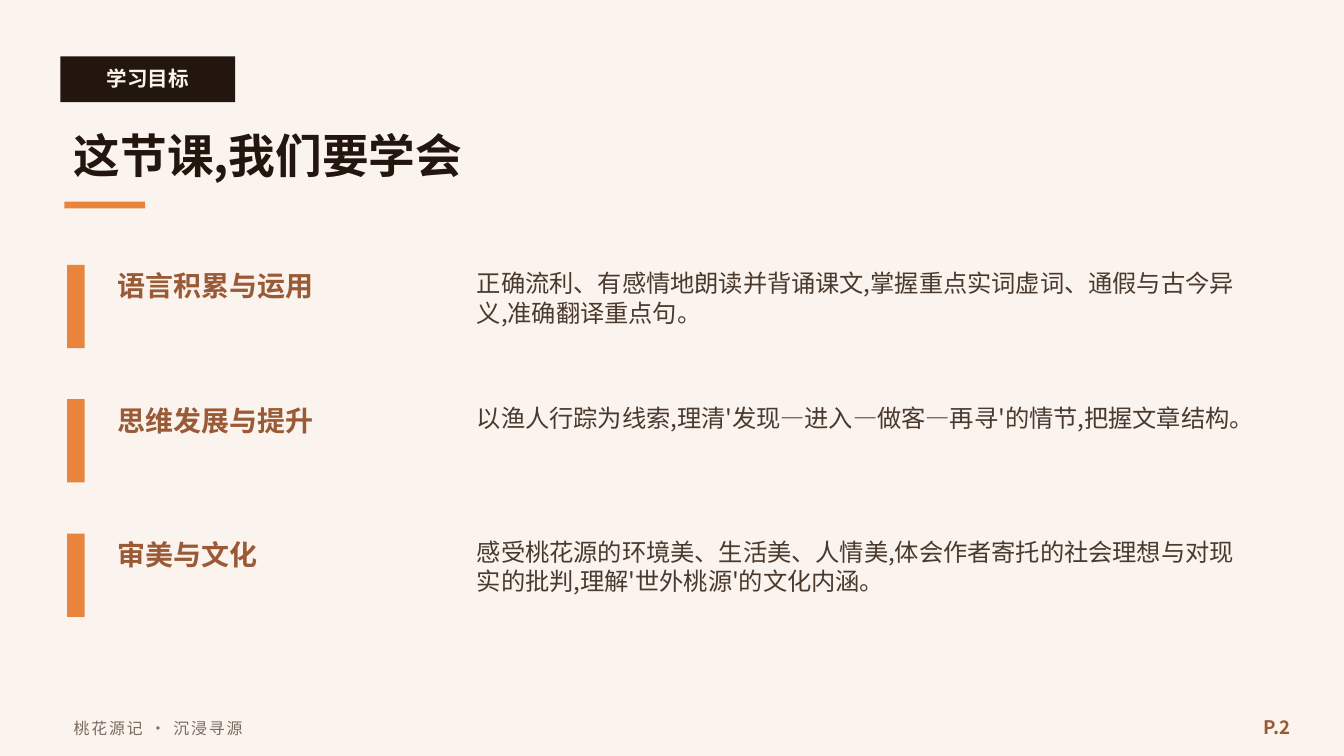
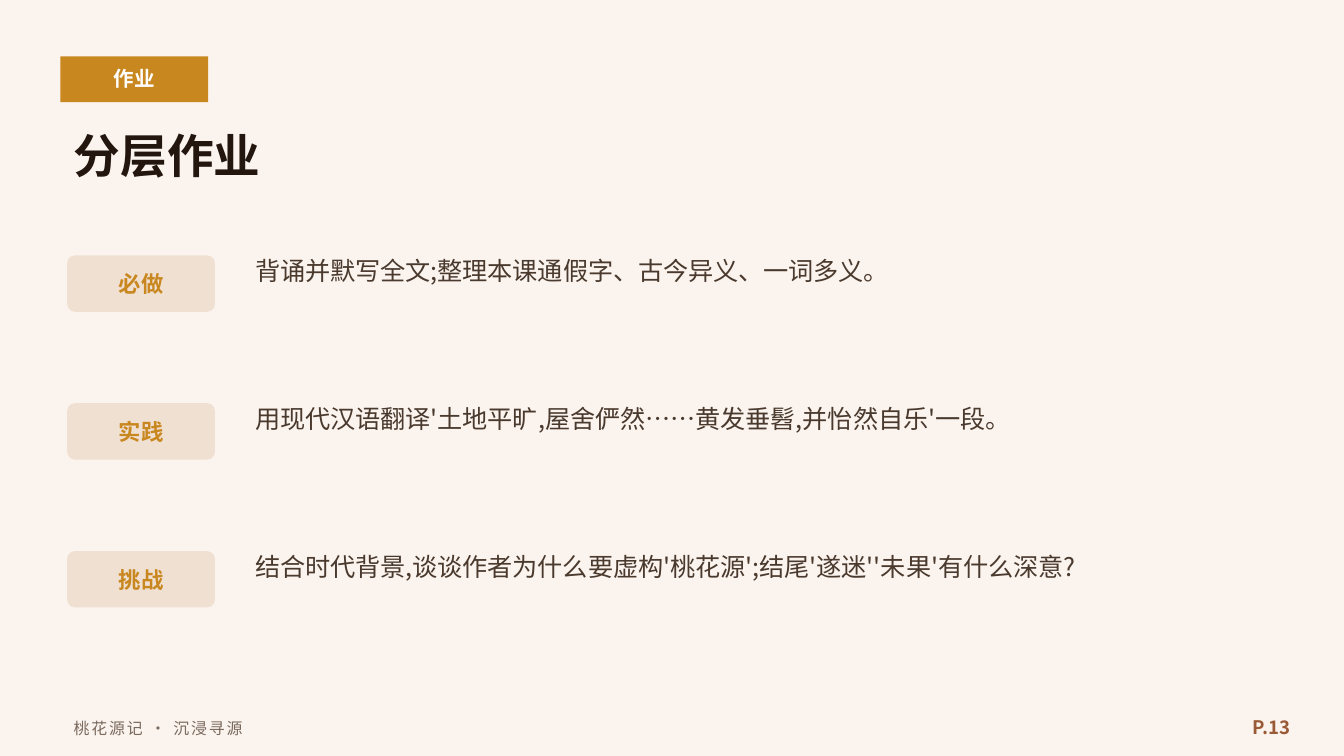
from pptx import Presentation
from pptx.dml.color import RGBColor
from pptx.enum.shapes import MSO_SHAPE
from pptx.enum.text import MSO_ANCHOR, MSO_AUTO_SIZE, PP_ALIGN
from pptx.oxml.ns import qn
from pptx.util import Inches, Pt

FONT = "Noto Sans CJK SC"
CREAM = RGBColor(0xFB, 0xF3, 0xEE)
WHITE = RGBColor(0xFF, 0xFF, 0xFF)
INK = RGBColor(0x23, 0x16, 0x0E)
BODY = RGBColor(0x4A, 0x3A, 0x2E)
MUTED = RGBColor(0x7A, 0x6A, 0x5E)
BROWN = RGBColor(0x9A, 0x5A, 0x36)
ORANGE = RGBColor(0xE8, 0x84, 0x3C)
GOLD = RGBColor(0xC9, 0x87, 0x1F)
SAND = RGBColor(0xF0, 0xE0, 0xD2)

GOALS = [
    ("语言积累与运用", "正确流利、有感情地朗读并背诵课文,掌握重点实词虚词、通假与古今异义,准确翻译重点句。"),
    ("思维发展与提升", "以渔人行踪为线索,理清'发现—进入—做客—再寻'的情节,把握文章结构。"),
    ("审美与文化", "感受桃花源的环境美、生活美、人情美,体会作者寄托的社会理想与对现实的批判,理解'世外桃源'的文化内涵。"),
]
TASKS = [
    ("必做", "背诵并默写全文;整理本课通假字、古今异义、一词多义。"),
    ("实践", "用现代汉语翻译'土地平旷,屋舍俨然……黄发垂髫,并怡然自乐'一段。"),
    ("挑战", "结合时代背景,谈谈作者为什么要虚构'桃花源';结尾'遂迷''未果'有什么深意?"),
]


# Shared building blocks
def write(frame, text, size, color, bold=False, align=PP_ALIGN.LEFT,
          anchor=MSO_ANCHOR.TOP, spacing=None):
    frame.word_wrap = True
    frame.auto_size = MSO_AUTO_SIZE.NONE
    frame.vertical_anchor = anchor
    paragraph = frame.paragraphs[0]
    paragraph.text = text
    paragraph.alignment = align
    font = paragraph.font
    font.name, font.size, font.bold = FONT, Pt(size), bold
    font.color.rgb = color
    # East Asian typeface and letter spacing
    defaults = paragraph._p.pPr.find(qn("a:defRPr"))
    east_asian = defaults.makeelement(qn("a:ea"), {"typeface": FONT})
    defaults.find(qn("a:latin")).addnext(east_asian)
    if spacing:
        defaults.set("spc", str(spacing * 100))


def add_text(slide, box, text, size, color, **style):
    label = slide.shapes.add_textbox(*map(Inches, box))
    write(label.text_frame, text, size, color, **style)


def add_block(slide, box, fill, preset=MSO_SHAPE.RECTANGLE):
    block = slide.shapes.add_shape(preset, *map(Inches, box))
    block.shadow.inherit = False
    block.fill.solid()
    block.fill.fore_color.rgb = fill
    block.line.fill.background()
    return block


# Section tag and title
def add_header(slide, tag, tag_width, tag_fill, tag_color, title):
    left, top = 0.45, 0.4
    add_block(slide, (left, top + 0.02, tag_width, 0.34), tag_fill)
    add_text(slide, (left, top, tag_width, 0.36), tag, 11, tag_color, bold=True,
             align=PP_ALIGN.CENTER, anchor=MSO_ANCHOR.MIDDLE)
    heading = slide.shapes.title
    heading.left, heading.top = Inches(left), Inches(top + 0.45)
    heading.width, heading.height = Inches(9), Inches(0.6)
    write(heading.text_frame, title, 25, INK, bold=True, anchor=MSO_ANCHOR.MIDDLE)


# Course name and page number
def add_footer(slide, page):
    add_text(slide, (0.45, 5.28, 7, 0.28), "桃花源记 · 沉浸寻源", 8.5, MUTED,
             anchor=MSO_ANCHOR.MIDDLE, spacing=1)
    add_text(slide, (9, 5.26, 0.7, 0.3), f"P.{page}", 10, BROWN, bold=True,
             align=PP_ALIGN.RIGHT, anchor=MSO_ANCHOR.MIDDLE)


# One goal: accent bar, name, explanation
def add_goal(slide, left, top, name, detail):
    add_block(slide, (left, top + 0.02, 0.13, 0.62), ORANGE)
    add_text(slide, (left + 0.28, top, 2.6, 0.6), name, 15, BROWN, bold=True)
    add_text(slide, (left + 2.95, top, 6, 0.9), detail, 13, BODY)


# One task: level pill, assignment
def add_task(slide, left, top, level, assignment):
    pill = add_block(slide, (left, top + 0.05, 1.1, 0.42), SAND, MSO_SHAPE.ROUNDED_RECTANGLE)
    pill.adjustments[0] = 0.14
    add_text(slide, (left, top + 0.04, 1.1, 0.44), level, 12, GOLD, bold=True,
             align=PP_ALIGN.CENTER, anchor=MSO_ANCHOR.MIDDLE)
    add_text(slide, (left + 1.3, top, 7.7, 0.9), assignment, 13.5, BODY)


def build_goals(slide):
    add_header(slide, "学习目标", 1.3, INK, CREAM, "这节课,我们要学会")
    add_block(slide, (0.48, 1.5, 0.6, 0.05), ORANGE)
    for row, (name, detail) in enumerate(GOALS):
        add_goal(slide, 0.5, 1.95 + row, name, detail)
    add_footer(slide, 2)


def build_homework(slide):
    add_header(slide, "作业", 1.1, GOLD, WHITE, "分层作业")
    for row, (level, assignment) in enumerate(TASKS):
        add_task(slide, 0.5, 1.85 + row * 1.1, level, assignment)
    add_footer(slide, 13)


def main():
    deck = Presentation()
    # Widescreen, 16:9
    deck.slide_width = Inches(10)
    deck.slide_height = Inches(10 * 9 / 16)
    background = deck.slide_master.background.fill
    background.solid()
    background.fore_color.rgb = CREAM
    title_only = deck.slide_layouts[5]
    for build in (build_goals, build_homework):
        build(deck.slides.add_slide(title_only))
    deck.save("out.pptx")


if __name__ == "__main__":
    main()
